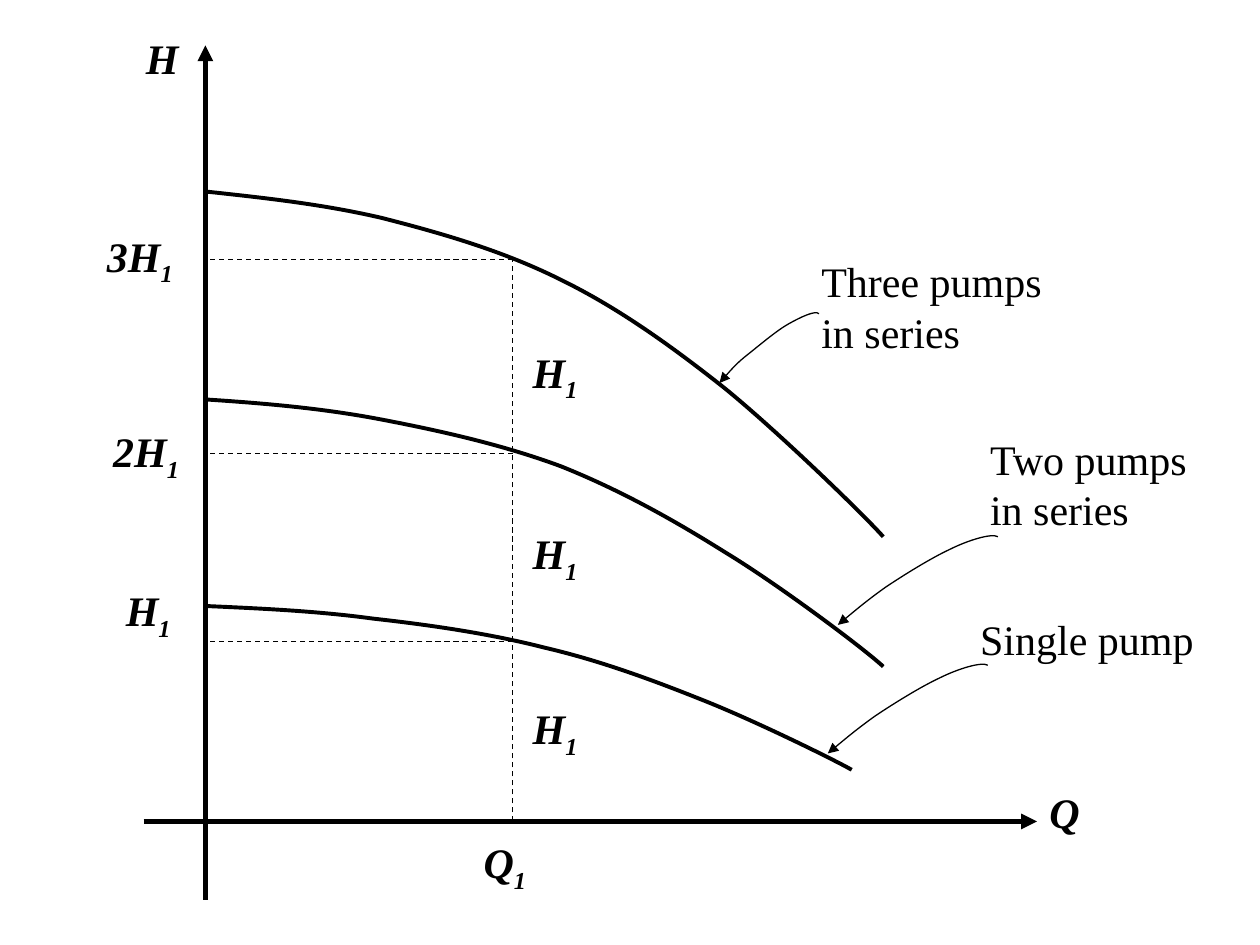
from pptx import Presentation
from pptx.dml.color import RGBColor
from pptx.enum.dml import MSO_LINE
from pptx.enum.shapes import MSO_CONNECTOR
from pptx.enum.text import MSO_ANCHOR, MSO_AUTO_SIZE
from pptx.oxml.ns import qn
from pptx.util import Inches, Pt
from lxml import etree

STRAIGHT = MSO_CONNECTOR.STRAIGHT
DASH = MSO_LINE.DASH
TOP = MSO_ANCHOR.TOP
GROW = MSO_AUTO_SIZE.SHAPE_TO_FIT_TEXT


def color(hex_string):
    return RGBColor.from_string(hex_string)


class PumpDiagram:
    """Holds the style and the slide, and draws each kind of element."""

    font = "Times New Roman"
    size = Pt(24)
    ink = "000000"
    paper = "FFFFFF"

    def __init__(self, slide):
        self.shapes = slide.shapes

    def stroke(self, shape, width, arrow_end=None):
        shape.line.color.rgb = color(self.ink)
        shape.line.width = Pt(width)
        if arrow_end:
            outline = shape.line._get_or_add_ln()
            etree.SubElement(outline, qn(f"a:{arrow_end}"), type="triangle")

    def line(self, start, end, width, dashed=False, arrow_end=None):
        connector = self.shapes.add_connector(STRAIGHT, *map(Inches, start + end))
        if dashed:
            connector.line.dash_style = DASH
        self.stroke(connector, width, arrow_end)
        etree.SubElement(connector.element.spPr, qn("a:effectLst"))

    def curve(self, points, width, arrow_end=None):
        start, *controls = [(Inches(x), Inches(y)) for x, y in points]
        builder = self.shapes.build_freeform(*start)
        builder.add_line_segments(controls, close=False)
        shape = builder.convert_to_shape()
        outline_path = shape.element.find(".//" + qn("a:path"))
        segments = outline_path.findall(qn("a:lnTo"))
        for first in range(0, len(segments), 3):
            bezier = etree.SubElement(outline_path, qn("a:cubicBezTo"))
            for segment in segments[first:first + 3]:
                bezier.append(segment[0])
                outline_path.remove(segment)
        shape.fill.background()
        shape.shadow.inherit = False
        self.stroke(shape, width, arrow_end)

    def label(self, box, text, subscript="", symbol=True, filled=False):
        textbox = self.shapes.add_textbox(*map(Inches, box))
        if filled:
            textbox.fill.solid()
            textbox.fill.fore_color.rgb = color(self.paper)
        frame = textbox.text_frame
        frame.word_wrap = True
        frame.auto_size = GROW
        frame.vertical_anchor = TOP
        paragraph = frame.paragraphs[0]
        spacing = etree.SubElement(paragraph._p.get_or_add_pPr(), qn("a:spcBef"))
        etree.SubElement(spacing, qn("a:spcPct"), val="50000")
        for part, baseline in ((text, None), (subscript, "-25000")):
            if not part:
                continue
            run = paragraph.add_run()
            run.text = part
            run.font.name = self.font
            run.font.size = self.size
            run.font.bold = run.font.italic = symbol
            run.font.color.rgb = color(self.ink)
            if baseline:
                run.font._element.set("baseline", baseline)


def main():
    presentation = Presentation()
    presentation.slide_width, presentation.slide_height = Inches(10), Inches(7.5)
    diagram = PumpDiagram(presentation.slides.add_slide(presentation.slide_layouts[6]))

    origin_x, origin_y, flow_x = 1.63, 6.52, 4.07
    diagram.line((1.14, origin_y), (8.23, origin_y), 3, arrow_end="tailEnd")
    diagram.line((origin_x, 7.14), (origin_x, 0.36), 3, arrow_end="tailEnd")

    single_x = (origin_x, 2.07, 2.52, 2.96, 3.41, 3.89, 4.32, 4.75, 5.16, 5.56, 5.97, 6.62, 6.76)
    series_x = (origin_x, 2.09, 2.56, 3.03, 3.5, 3.99, 4.45, 4.9, 5.32, 5.75, 6.18, 6.86, 7.01)
    pump_curves = (
        (single_x, (4.81, 4.83, 4.85, 4.91, 4.96, 5.03, 5.14, 5.24, 5.39, 5.55, 5.71, 6.03, 6.11)),
        (series_x, (3.17, 3.2, 3.24, 3.33, 3.42, 3.53, 3.7, 3.88, 4.11, 4.38, 4.64, 5.15, 5.29)),
        (series_x, (1.52, 1.57, 1.62, 1.73, 1.85, 1.99, 2.22, 2.44, 2.74, 3.08, 3.43, 4.09, 4.26)),
    )
    for flows, heads in pump_curves:
        diagram.curve(list(zip(flows, heads)), 2.25)

    diagram.line((flow_x, origin_y), (flow_x, 2.01), 0.75, dashed=True)
    for head_y in (3.6, 2.06, 5.09):
        diagram.line((flow_x, head_y), (origin_x, head_y), 0.75, dashed=True)

    diagram.label((1.06, 0.21, 0.47, 0.5), "H")
    diagram.label((8.23, 6.19, 0.47, 0.5), "Q")
    diagram.label((3.74, 6.59, 0.71, 0.5), "Q", "1")
    for step_y in (5.53, 4.14, 2.7):
        diagram.label((4.13, step_y, 0.87, 0.5), "H", "1")
    for box, total_head in (
        ((0.8, 3.33, 0.75, 0.5), "2H"),
        ((0.9, 4.59, 0.63, 0.5), "H"),
        ((0.75, 1.78, 0.75, 0.5), "3H"),
    ):
        diagram.label(box, total_head, "1", filled=True)
    for box, caption in (
        ((7.68, 4.82, 2.05, 0.5), "Single pump"),
        ((7.76, 3.39, 1.93, 0.9), "Two pumps in series"),
        ((6.42, 1.98, 2.01, 0.9), "Three pumps in series"),
    ):
        diagram.label(box, caption, symbol=False)

    three_leader = ((5.71, 3.04), (5.78, 2.96), (5.85, 2.88), (5.94, 2.81), (6.04, 2.73),
                    (6.17, 2.62), (6.26, 2.57), (6.35, 2.52), (6.47, 2.46), (6.5, 2.49))
    single_leader = ((6.57, 5.98), (6.69, 5.88), (6.81, 5.78), (6.95, 5.68), (7.1, 5.58),
                     (7.31, 5.45), (7.46, 5.38), (7.6, 5.31), (7.79, 5.25), (7.84, 5.28))
    two_leader = [(x + 0.08, y - 1.02) for x, y in single_leader]
    for leader in (three_leader, single_leader, two_leader):
        diagram.curve(leader, 0.75, arrow_end="headEnd")

    presentation.save("out.pptx")


if __name__ == "__main__":
    main()
